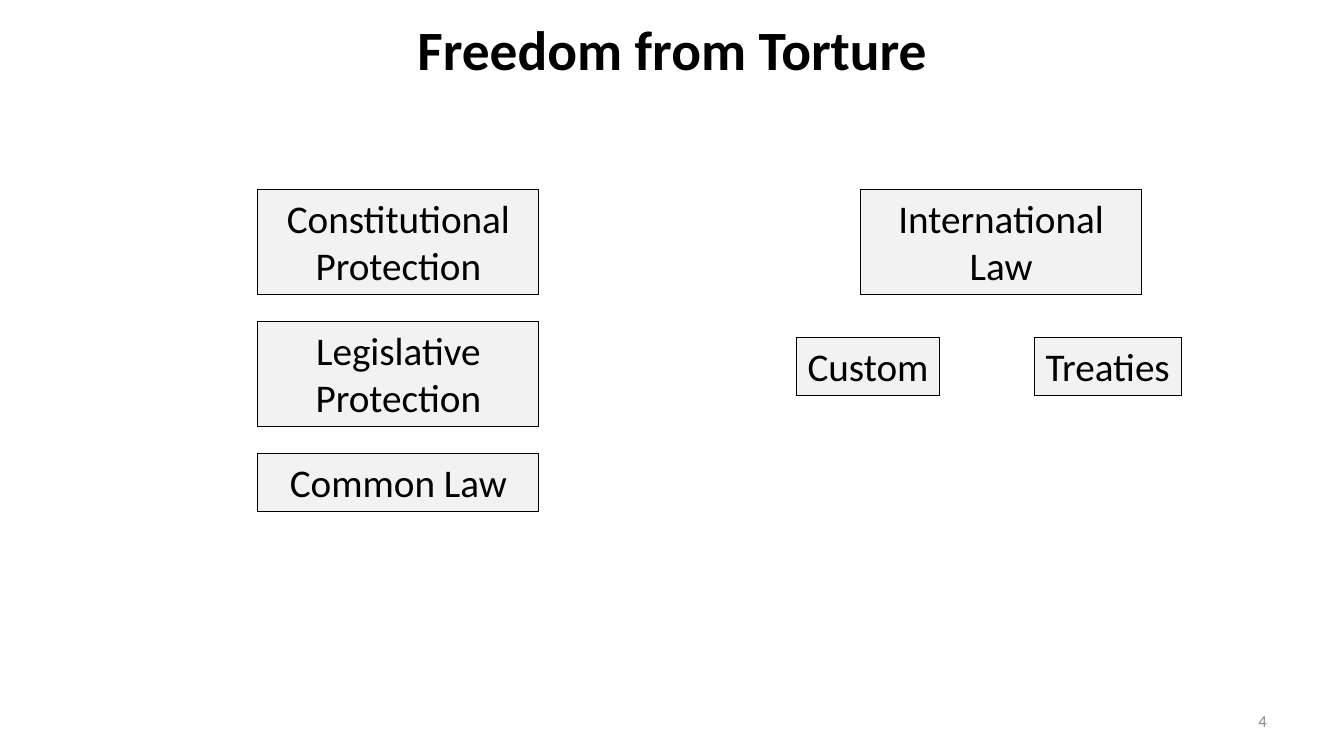
from pptx import Presentation
from pptx.dml.color import RGBColor
from pptx.enum.shapes import MSO_SHAPE
from pptx.enum.text import MSO_ANCHOR, MSO_AUTO_SIZE, PP_ALIGN
from pptx.util import Cm, Pt

RECT = MSO_SHAPE.RECTANGLE
TOP, MIDDLE = MSO_ANCHOR.TOP, MSO_ANCHOR.MIDDLE
CENTER, RIGHT = PP_ALIGN.CENTER, PP_ALIGN.RIGHT
GROW = MSO_AUTO_SIZE.SHAPE_TO_FIT_TEXT


def color(value):
    return RGBColor.from_string(value)


class Deck:
    font = "Calibri"
    ink = "000000"
    muted = "8C8C8C"
    box_fill = "F2F2F2"

    def __init__(self, prs):
        self.s = prs.slides.add_slide(prs.slide_layouts[6])

    def add_text(self, sp, text, size, ink, align, anchor, bold=False, wrap=True):
        tf = sp.text_frame
        tf.word_wrap = wrap
        tf.vertical_anchor = anchor
        p = tf.paragraphs[0]
        p.alignment = align
        r = p.add_run()
        r.text = text
        r.font.name = self.font
        r.font.size = Pt(size)
        r.font.bold = bold
        r.font.color.rgb = color(ink)

    def label(self, text, x, y, w, h, size, ink, align, bold=False):
        sp = self.s.shapes.add_textbox(Cm(x), Cm(y), Cm(w), Cm(h))
        self.add_text(sp, text, size, ink, align, MIDDLE, bold)

    def box(self, text, x, y, w, h, wrap=True):
        sp = self.s.shapes.add_shape(RECT, Cm(x), Cm(y), Cm(w), Cm(h))
        sp.shadow.inherit = False
        sp.fill.solid()
        sp.fill.fore_color.rgb = color(self.box_fill)
        sp.line.color.rgb = color(self.ink)
        sp.line.width = Pt(0.75)
        self.add_text(sp, text, 28, self.ink, CENTER, TOP, wrap=wrap)
        sp.text_frame.auto_size = GROW


def main():
    prs = Presentation()
    prs.slide_width, prs.slide_height = Cm(33.87), Cm(19.05)
    deck = Deck(prs)
    deck.label("Freedom from Torture", 1.7, 0.33, 30.48, 1.8, 39.6, deck.ink, CENTER, True)

    top, pitch, width = 4.77, 3.33, 7.08
    one_line, two_lines = 1.45, 2.65
    domestic = [
        ("Constitutional Protection", two_lines),
        ("Legislative Protection", two_lines),
        ("Common Law", one_line),
    ]
    for i, (text, height) in enumerate(domestic):
        deck.box(text, 6.5, top + i * pitch, width, height)

    deck.box("International Law", 21.69, top, width, two_lines)
    for text, x, w in [("Custom", 20.07, 3.61), ("Treaties", 26.06, 3.71)]:
        deck.box(text, x, 8.51, w, one_line, wrap=False)

    deck.label("4", 24.28, 17.65, 7.9, 1.02, 12, deck.muted, RIGHT)
    prs.save("out.pptx")


if __name__ == "__main__":
    main()
